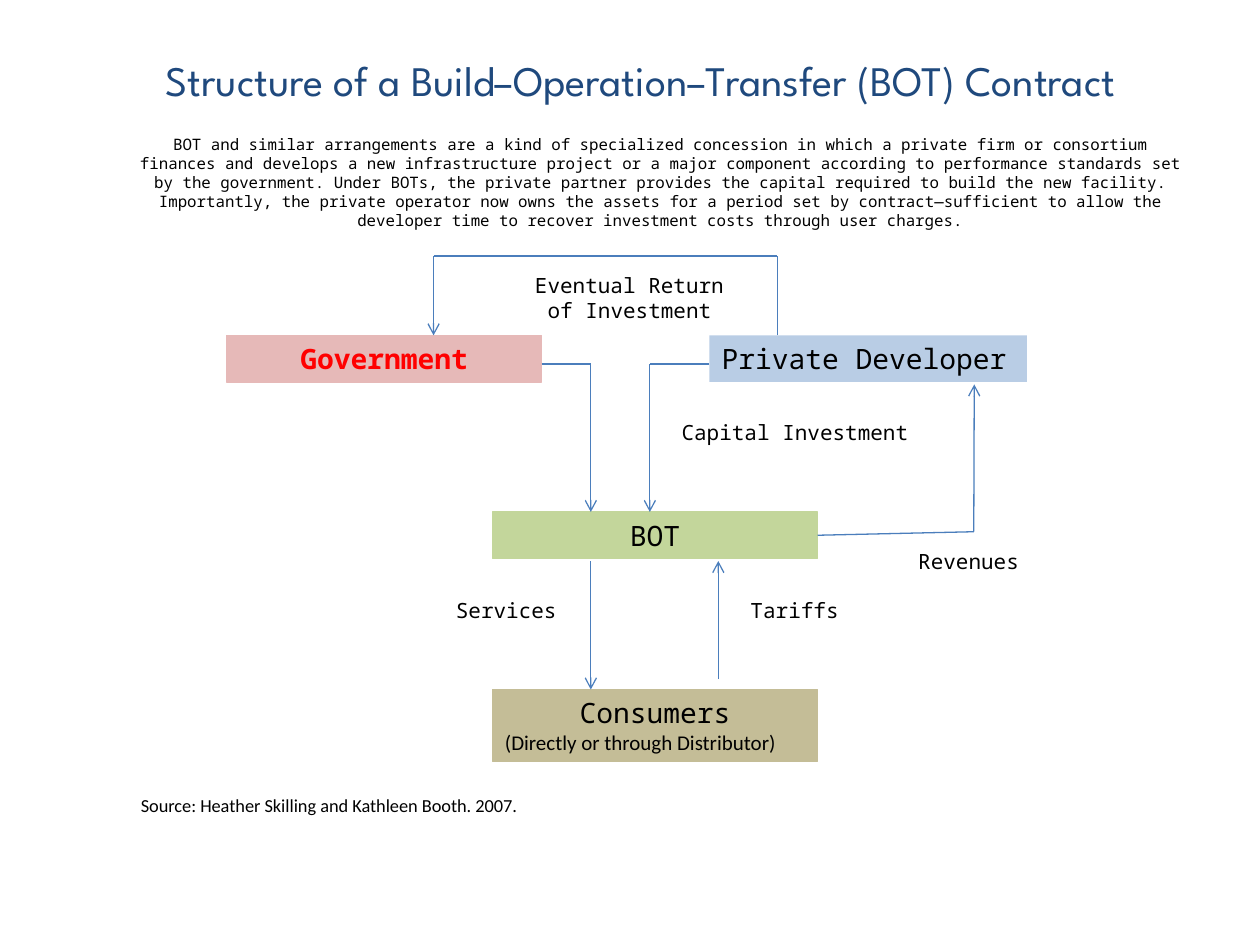
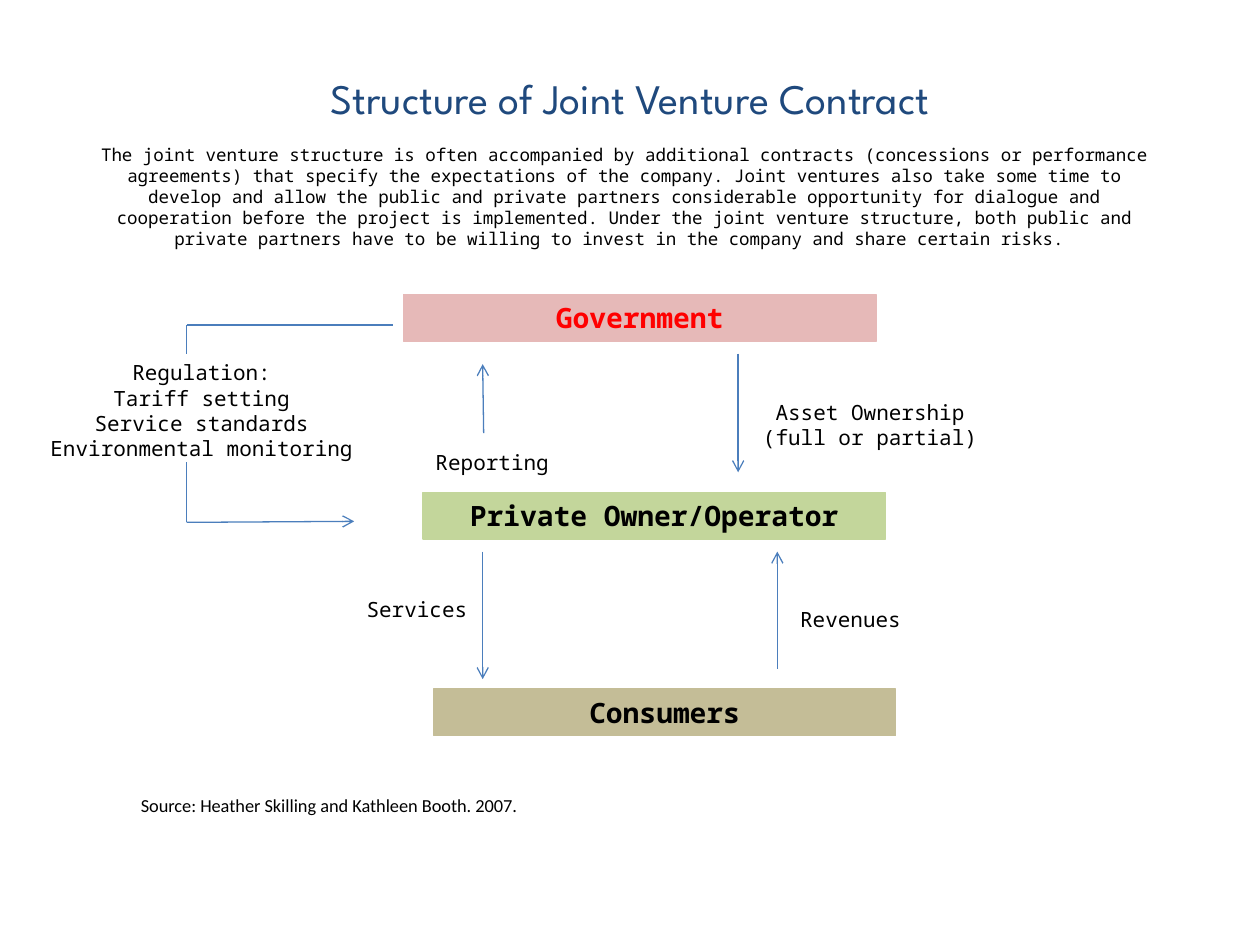
from itertools import pairwise

from lxml.etree import SubElement
from pptx import Presentation
from pptx.dml.color import RGBColor
from pptx.enum.shapes import MSO_CONNECTOR as Link, MSO_SHAPE as Shape
from pptx.enum.text import MSO_ANCHOR as Anchor, MSO_AUTO_SIZE as Fit, PP_ALIGN as Align
from pptx.oxml.ns import qn
from pptx.util import Cm, Pt

NAVY = RGBColor(0x1F, 0x49, 0x7D)
BLACK = RGBColor(0, 0, 0)
RED = RGBColor(0xFF, 0, 0)
PINK = RGBColor(0xE6, 0xB9, 0xB8)
GREEN = RGBColor(0xC3, 0xD6, 0x9B)
TAN = RGBColor(0xC4, 0xBD, 0x97)
SKY = RGBColor(0xB9, 0xCD, 0xE5)
BLUE = RGBColor(0x4B, 0x7E, 0xBC)

MONO, SANS, HEAD = "Noto Sans Mono", "Calibri", "League Spartan"
BAR = 0.94  # height of a one-line bar
ROW = 0.76  # height of a one-line label
SOURCE = "Source: Heather Skilling and Kathleen Booth. 2007."

BOT_INTRO = (
    "BOT and similar arrangements are a kind of specialized concession in which "
    "a private firm or consortium finances and develops a new infrastructure "
    "project or a major component according to performance standards set by the "
    "government. Under BOTs, the private partner provides the capital required "
    "to build the new facility. Importantly, the private operator now owns the "
    "assets for a period set by contract—sufficient to allow the developer time "
    "to recover investment costs through user charges."
)
JOINT_INTRO = (
    "The joint venture structure is often accompanied by additional contracts "
    "(concessions or performance agreements) that specify the expectations of "
    "the company. Joint ventures also take some time to develop and allow the "
    "public and private partners considerable opportunity for dialogue and "
    "cooperation before the project is implemented. Under the joint venture "
    "structure, both public and private partners have to be willing to invest "
    "in the company and share certain risks. "
)


def style(par, size, font=MONO, color=BLACK, bold=False, align=Align.LEFT):
    par.alignment = align
    for run in par.runs:
        run.font.size = Pt(size)
        run.font.name = font
        run.font.bold = bold
        run.font.color.rgb = color


def write(frame, text, size, wrap=True, **look):
    frame.text = text
    frame.word_wrap = wrap
    frame.auto_size = Fit.SHAPE_TO_FIT_TEXT
    for par in frame.paragraphs:
        style(par, size, **look)


def note(slide, box, text, size, **look):
    area = slide.shapes.add_textbox(*map(Cm, box))
    write(area.text_frame, text, size, **look)


def page(deck, title, place, intro, box, size):
    """Add a slide with its title, introduction and source line."""
    slide = deck.slides.add_slide(deck.slide_layouts[5])
    head = slide.shapes.title
    head.left, head.top, head.width, head.height = map(Cm, place)
    head.text_frame.text = title
    head.text_frame.vertical_anchor = Anchor.MIDDLE
    style(head.text_frame.paragraphs[0], 24, HEAD, NAVY, align=Align.CENTER)
    note(slide, box, intro, size, align=Align.CENTER)
    note(slide, (2.59, 15.88, 12.7, 0.71), SOURCE, 10.5, font=SANS)
    return slide


class Chart:
    """Flow chart whose parts are placed from its top left corner."""

    def __init__(self, slide, left, top):
        self.slide, self.left, self.top = slide, left, top

    def shift(self, x, y):
        return self.left + x, self.top + y

    def bar(self, x, y, wide, text, fill, high=BAR, edge=True, align=Align.CENTER, **look):
        box = (*self.shift(x, y), wide, high)
        bar = self.slide.shapes.add_shape(Shape.RECTANGLE, *map(Cm, box))
        bar.shadow.inherit = False
        bar.fill.solid()
        bar.fill.fore_color.rgb = fill
        if edge:
            bar.line.color.rgb = fill
            bar.line.width = Pt(0.75)
        else:
            bar.line.fill.background()
        bar.text_frame.vertical_anchor = Anchor.TOP
        write(bar.text_frame, text, 16, align=align, **look)
        return bar

    def label(self, x, y, wide, text, high=ROW, **look):
        note(self.slide, (*self.shift(x, y), wide, high), text, 12, **look)

    def route(self, *points, arrow=True, start=None):
        """Draw straight lines through the points, with an arrow at the last."""
        for a, b in pairwise(points):
            ends = (*self.shift(*a), *self.shift(*b))
            line = self.slide.shapes.add_connector(Link.STRAIGHT, *map(Cm, ends))
            line.line.color.rgb = BLUE
            line.line.width = Pt(0.75)
            props = line._element.spPr
            SubElement(props, qn("a:effectLst"))
            if start and a == points[0]:
                line.begin_connect(start, 3)
        if arrow:
            SubElement(props.find(qn("a:ln")), qn("a:tailEnd"), type="arrow")


def bot_flow(slide, left, top):
    flow = Chart(slide, left, top)
    mid, low, wide = 5.36, 5.16, 6.55
    lane = 7.34  # shared by the government link and the services arrow
    flow.bar(0, 1.6, 6.35, "Government", PINK, color=RED, bold=True)
    bot = flow.bar(mid, low, wide, "BOT", GREEN)
    users = flow.bar(mid, 8.74, wide, "Consumers\n(Directly or through Distributor)", TAN, high=1.45)
    style(users.text_frame.paragraphs[1], 12, SANS)
    flow.bar(9.73, 1.6, 6.4, "Private Developer", SKY, edge=False, align=Align.LEFT)

    flow.label(3.56, 0.2, 9.12, "Eventual Return\nof Investment", high=1.27, align=Align.CENTER)
    for x, y, size, text in (
        (8.92, 3.18, 5.16, "Capital Investment"),
        (13.69, 5.77, 2.59, "Revenues"),
        (4.37, 6.76, 2.59, "Services"),
        (10.31, 6.76, 2.31, "Tariffs"),
    ):
        flow.label(x, y, size, text, wrap=False)

    flow.route((11.1, 1.6), (11.1, 0), (4.17, 0), (4.17, 1.6))
    flow.route((9.73, 2.18), (8.53, 2.18), (8.53, low))
    flow.route((6.35, 2.18), (lane, 2.18), (lane, low))
    flow.route((mid + wide, low + BAR / 2), (15.06, 5.56), (15.07, 2.59), start=bot)
    flow.route((lane, 6.15), (lane, 8.74))
    flow.route((9.91, 8.53), (9.91, 6.15))


def joint_flow(slide, left, top):
    flow = Chart(slide, left, top)
    side, lane = 3.76, 9.73
    for x, y, wide, text, fill, color in (
        (8.13, 0, 9.53, "Government", PINK, RED),
        (8.53, 3.99, 9.32, "Private Owner/Operator", GREEN, BLACK),
        (8.74, 7.95, 9.32, "Consumers", TAN, BLACK),
    ):
        flow.bar(x, y, wide, text, fill, color=color, bold=True)

    rules = "Regulation:\nTariff setting\nService standards\nEnvironmental monitoring"
    flow.label(0, 1.19, 8.13, rules, high=2.31, align=Align.CENTER)
    flow.label(15.09, 1.98, 4.9, "Asset Ownership\n(full or partial)", high=1.27,
               wrap=False, align=Align.CENTER)
    for x, y, size, text in (
        (8.53, 3, 2.84, "Reporting"),
        (7.14, 5.97, 2.59, "Services"),
        (15.88, 6.17, 2.59, "Revenues"),
    ):
        flow.label(x, y, size, text, wrap=False)

    flow.route((7.92, 0.61), (side, 0.61), (side, 1.19), arrow=False)
    flow.route((side, 3.38), (side, 4.59), (7.14, 4.57))
    flow.route((9.75, 2.79), (lane, 1.4))
    flow.route((14.88, 1.19), (14.88, 3.58))
    flow.route((lane, 5.18), (lane, 7.75))
    flow.route((15.67, 7.54), (15.67, 5.18))


def main():
    deck = Presentation()
    deck.slide_width, deck.slide_height = Cm(25.4), Cm(19.05)
    slide = page(deck, "Structure of a Build–Operation–Transfer (BOT) Contract",
                 (0.99, 0.41, 23.85, 2.39), BOT_INTRO, (2.39, 2.59, 21.82, 2.18), 9)
    bot_flow(slide, 4.57, 5.16)
    slide = page(deck, "Structure of Joint Venture Contract",
                 (1.27, 0.76, 22.86, 2.41), JOINT_INTRO, (1.57, 2.77, 22.02, 2.39), 10)
    joint_flow(slide, 0, 5.94)
    deck.save("out.pptx")


if __name__ == "__main__":
    main()
